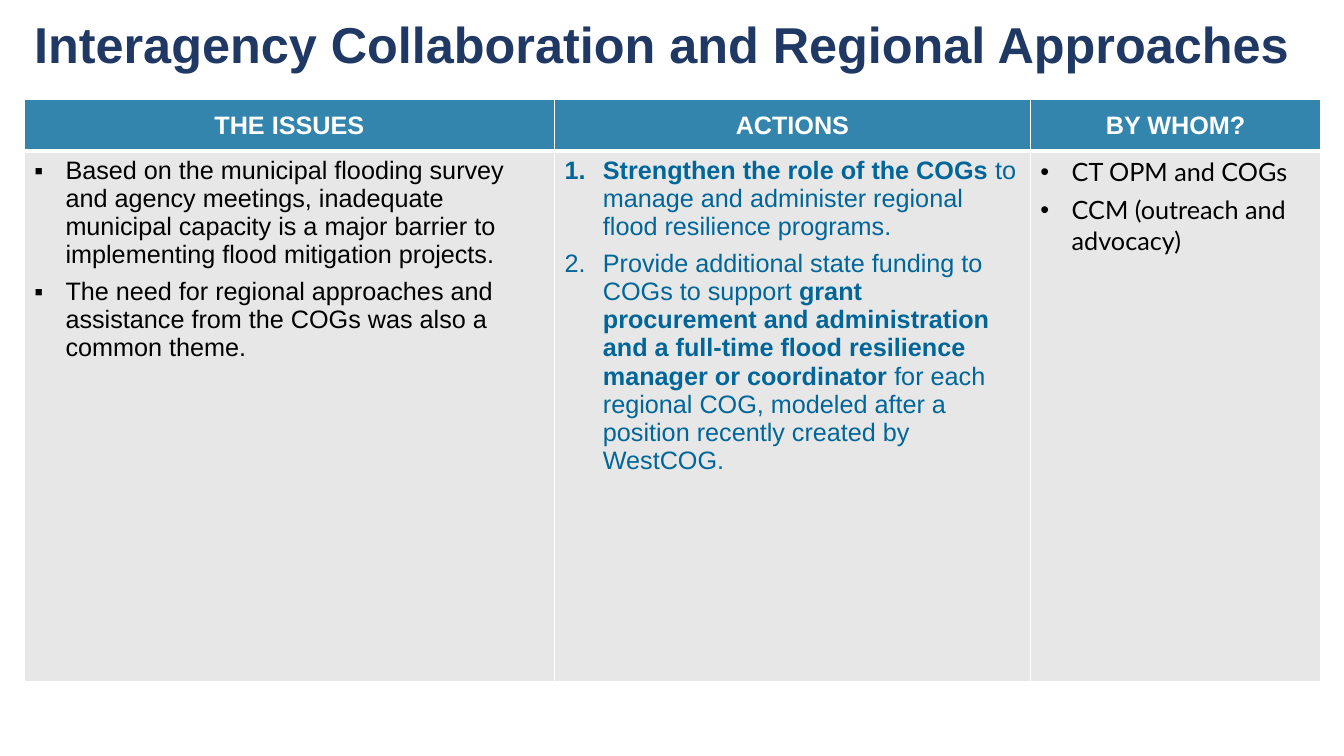
import pptx
import pptx.dml.color
import pptx.enum.text
import pptx.oxml
import pptx.oxml.ns
import pptx.util
from lxml import etree
from pptx.util import Inches

LEFT, WIDTH = 0.24, 12.86
COLUMN_WIDTHS = (5.26, 4.72, 2.88)
ROW_HEIGHTS = (0.51, 5.26)
HEADINGS = ("THE ISSUES", "ACTIONS", "BY WHOM?")
BLACK, WHITE, BLUE, NAVY = "000000", "FFFFFF", "006699", "203864"
HEADING_FILL, BODY_FILL = "3385AD", "E7E7E7"

# Each item is a list of (text, bold) spans.
ISSUES = [
    [("Based on the municipal flooding survey and agency meetings, inadequate "
      "municipal capacity is a major barrier to implementing flood mitigation projects.", False)],
    [("The need for regional approaches and assistance from the COGs was also a "
      "common theme.", False)],
]
ACTIONS = [
    [("Strengthen the role of the COGs ", True),
     ("to manage and administer regional flood resilience programs.", False)],
    [("Provide additional state funding to COGs to support ", False),
     ("grant procurement and administration and a full-time flood resilience "
      "manager or coordinator ", True),
     ("for each regional COG, modeled after a position recently created by WestCOG.", False)],
]
BY_WHOM = [
    [("CT OPM and COGs", False)],
    [("CCM (outreach and advocacy)", False)],
]


def rgb(value):
    return pptx.dml.color.RGBColor.from_string(value)


def add_span(para, text, size, color, bold=False, font="Arial"):
    span = para.add_run()
    span.text = text
    span.font.name = font
    span.font.size = pptx.util.Pt(size)
    span.font.bold = bold
    span.font.color.rgb = rgb(color)


def set_marker(para, marker, indent):
    """Give a hanging bullet, or automatic numbering when marker is "1."."""
    properties = para._p.get_or_add_pPr()
    properties.set("marL", str(Inches(indent)))
    properties.set("indent", str(-Inches(indent)))
    qn = pptx.oxml.ns.qn
    etree.SubElement(properties, qn("a:buFont")).set("typeface", "Arial")
    if marker == "1.":
        etree.SubElement(properties, qn("a:buAutoNum")).set("type", "arabicPeriod")
    else:
        etree.SubElement(properties, qn("a:buChar")).set("char", marker)


def style_cell(cell, fill, bottom_width=1):
    """Draw white borders, then the fill, which must follow them in the XML."""
    properties = cell._tc.get_or_add_tcPr()
    namespace = pptx.oxml.ns.nsdecls("a")
    for side in "LRTB":
        width = pptx.util.Pt(bottom_width if side == "B" else 1)
        properties.append(pptx.oxml.parse_xml(
            f'<a:ln{side} {namespace} w="{width}"><a:solidFill>'
            f'<a:srgbClr val="{WHITE}"/></a:solidFill></a:ln{side}>'))
    cell.fill.solid()
    cell.fill.fore_color.rgb = rgb(fill)


def add_title(page, text):
    box = page.shapes.add_textbox(Inches(LEFT), Inches(0.13), Inches(WIDTH), Inches(0.6))
    frame = box.text_frame
    frame.word_wrap = True
    frame.vertical_anchor = pptx.enum.text.MSO_ANCHOR.MIDDLE
    add_span(frame.paragraphs[0], text, 36, NAVY, bold=True)


def fill_heading(cell, text):
    style_cell(cell, HEADING_FILL, bottom_width=3)
    cell.vertical_anchor = pptx.enum.text.MSO_ANCHOR.MIDDLE
    para = cell.text_frame.paragraphs[0]
    para.alignment = pptx.enum.text.PP_ALIGN.CENTER
    add_span(para, text, 18, WHITE, bold=True)


def fill_list(cell, items, marker, indent, color, font="Arial"):
    style_cell(cell, BODY_FILL)
    frame = cell.text_frame
    for index, spans in enumerate(items):
        para = frame.add_paragraph() if index else frame.paragraphs[0]
        set_marker(para, marker, indent)
        para.space_after = pptx.util.Pt(6)
        for text, bold in spans:
            add_span(para, text, 18, color, bold, font)


def add_action_table(page):
    table = page.shapes.add_table(
        len(ROW_HEIGHTS), len(COLUMN_WIDTHS), Inches(LEFT), Inches(0.99),
        Inches(WIDTH), Inches(sum(ROW_HEIGHTS))).table
    for column, width in zip(table.columns, COLUMN_WIDTHS):
        column.width = Inches(width)
    for row, height in zip(table.rows, ROW_HEIGHTS):
        row.height = Inches(height)
    for index, heading in enumerate(HEADINGS):
        fill_heading(table.cell(0, index), heading)
    fill_list(table.cell(1, 0), ISSUES, "▪", 0.31, BLACK)
    fill_list(table.cell(1, 1), ACTIONS, "1.", 0.38, BLUE)
    fill_list(table.cell(1, 2), BY_WHOM, "•", 0.31, BLACK, font="Lato")


def main():
    deck = pptx.Presentation()
    deck.slide_width, deck.slide_height = Inches(13.33), Inches(7.5)
    page = deck.slides.add_slide(deck.slide_layouts[6])
    add_title(page, "Interagency Collaboration and Regional Approaches")
    add_action_table(page)
    deck.save("out.pptx")


if __name__ == "__main__":
    main()
